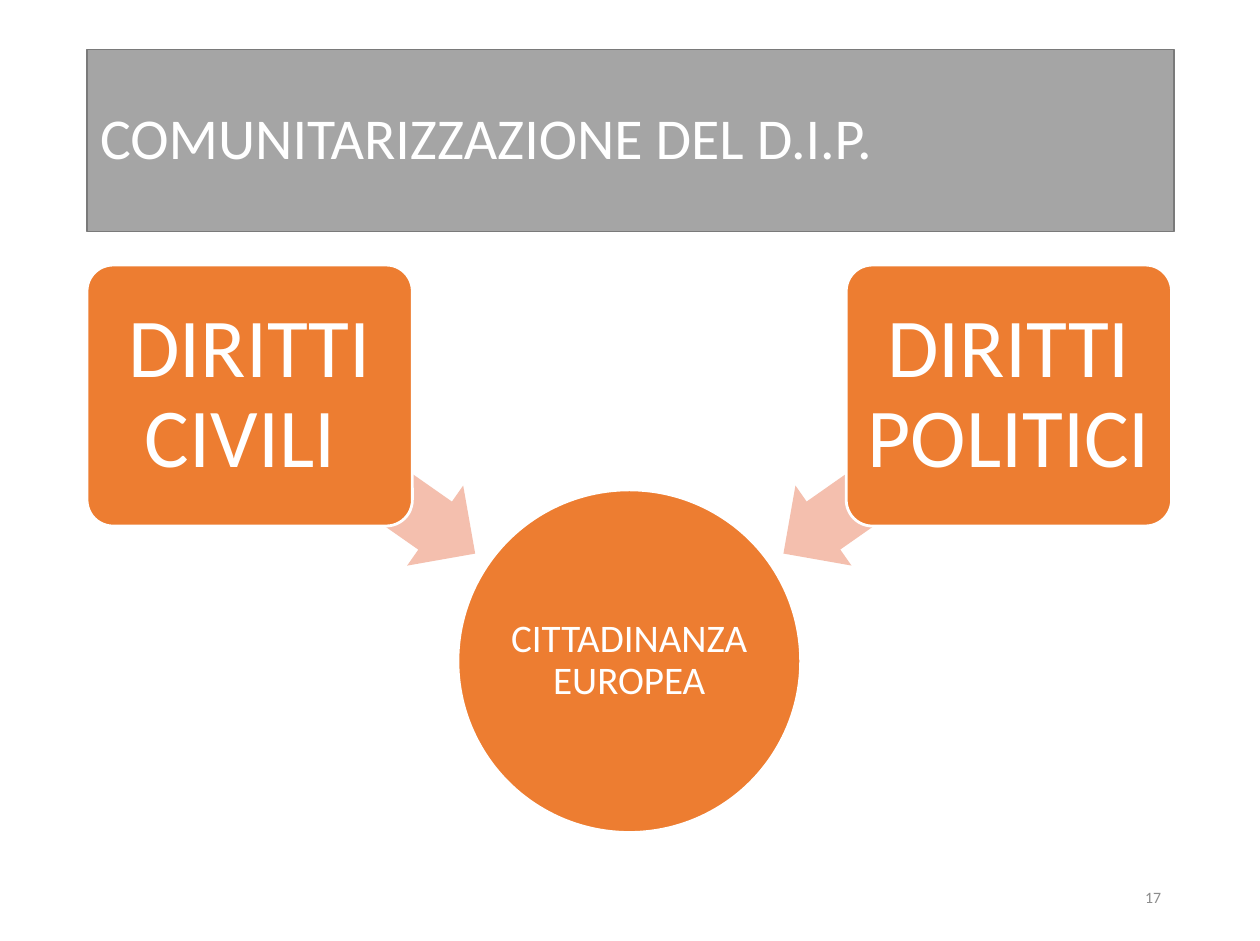
"""Build the slide on civil and political rights merging into European citizenship."""
from pptx import Presentation
from pptx.dml.color import RGBColor
from pptx.enum.shapes import MSO_SHAPE
from pptx.enum.text import MSO_ANCHOR, PP_ALIGN
from pptx.util import Inches, Pt

WHITE = RGBColor(0xFF, 0xFF, 0xFF)
GREY = RGBColor(0xA5, 0xA5, 0xA5)
DARK_GREY = RGBColor(0x7A, 0x7A, 0x7A)
NUMBER_GREY = RGBColor(0x8C, 0x8C, 0x8C)
ORANGE = RGBColor(0xED, 0x7D, 0x31)
PINK = RGBColor(0xF4, 0xBF, 0xAE)

TITLE = "COMUNITARIZZAZIONE DEL D.I.P."
CENTRE = "CITTADINANZA EUROPEA"
RIGHTS = [("DIRITTI CIVILI ", -1), ("DIRITTI POLITICI", 1)]
NUMBER = "17"

MIDDLE = 4.7
CIRCLE = 2.56
BOX_W, BOX_H, BOX_TOP, BOX_OFFSET = 2.43, 1.95, 1.98, 2.835
ARROW_W, ARROW_H, ARROW_TOP, ARROW_OFFSET = 2.06, 0.73, 3.18, 1.995
ARROW_TILT = 35

prs = Presentation()
prs.slide_width, prs.slide_height = Inches(9.41), Inches(7.03)
slide = prs.slides.add_slide(prs.slide_layouts[6])


def add_shape(kind, x, y, w, h, fill, line=None, line_width=1.5):
    s = slide.shapes.add_shape(kind, Inches(x), Inches(y), Inches(w), Inches(h))
    s.shadow.inherit = False
    s.fill.solid()
    s.fill.fore_color.rgb = fill
    if line is None:
        s.line.fill.background()
    else:
        s.line.color.rgb = line
        s.line.width = Pt(line_width)
    return s


def write(s, text, size, align, color=WHITE, inset=None, spacing=0.9):
    tf = s.text_frame
    tf.word_wrap = True
    tf.vertical_anchor = MSO_ANCHOR.MIDDLE
    if inset is not None:
        for side in ("left", "top", "right", "bottom"):
            setattr(tf, f"margin_{side}", Inches(inset))
    p = tf.paragraphs[0]
    p.alignment, p.line_spacing = align, spacing
    r = p.add_run()
    r.text = text
    for name, value in {"name": "Calibri", "size": Pt(size)}.items():
        setattr(r.font, name, value)
    r.font.color.rgb = color


title = add_shape(MSO_SHAPE.RECTANGLE, 0.65, 0.37, 8.12, 1.36, GREY, DARK_GREY, 1)
write(title, TITLE, 31.1, PP_ALIGN.JUSTIFY)

circle = add_shape(MSO_SHAPE.OVAL, MIDDLE - CIRCLE / 2, 3.66, CIRCLE, CIRCLE, ORANGE, WHITE)
write(circle, CENTRE, 21, PP_ALIGN.CENTER, inset=0.01)

for text, side in RIGHTS:
    arrow = add_shape(MSO_SHAPE.LEFT_ARROW, MIDDLE + side * ARROW_OFFSET - ARROW_W / 2,
                      ARROW_TOP, ARROW_W, ARROW_H, PINK)
    arrow.adjustments[0], arrow.adjustments[1] = 0.6, 0.5
    arrow.rotation = 270 + side * (90 - ARROW_TILT)
    box = add_shape(MSO_SHAPE.ROUNDED_RECTANGLE, MIDDLE + side * BOX_OFFSET - BOX_W / 2,
                    BOX_TOP, BOX_W, BOX_H, ORANGE, WHITE)
    box.adjustments[0] = 0.1
    write(box, text, 45, PP_ALIGN.CENTER, inset=0.09)

number = slide.shapes.add_textbox(Inches(6.65), Inches(6.52), Inches(2.12), Inches(0.37))
write(number, NUMBER, 8.5, PP_ALIGN.RIGHT, NUMBER_GREY, spacing=1.0)

prs.save("out.pptx")
